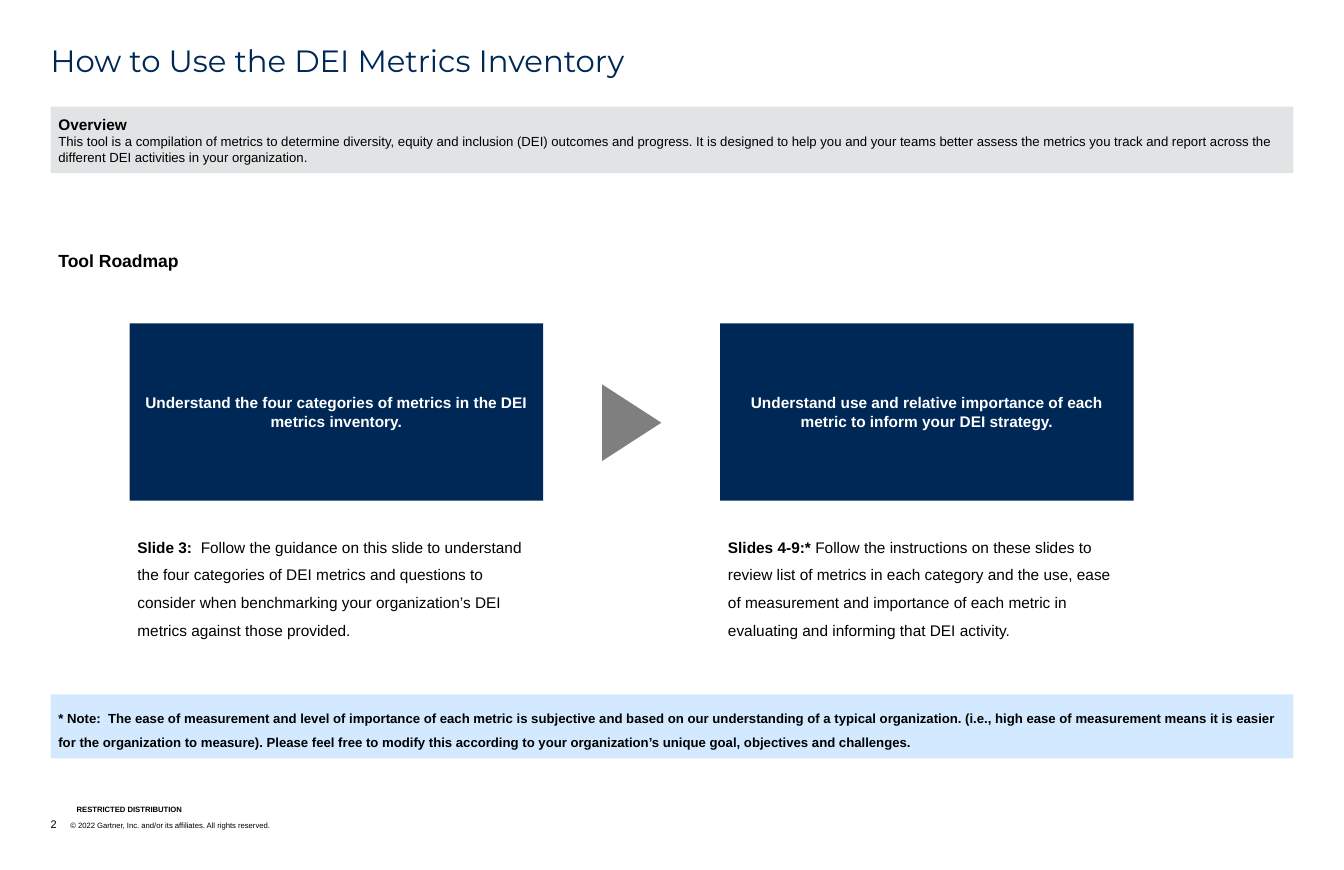
"""Build the slide on how to use the DEI metrics inventory."""
from dataclasses import dataclass

from pptx import Presentation
from pptx.dml.color import RGBColor
from pptx.enum.shapes import MSO_SHAPE as Preset
from pptx.enum.text import MSO_ANCHOR as Anchor, PP_ALIGN as Align
from pptx.shapes.autoshape import Shape
from pptx.slide import Slide
from pptx.util import Pt


@dataclass(frozen=True)
class Theme:
    navy: str = "002856"
    black: str = "000000"
    white: str = "FFFFFF"
    overview: str = "E1E4E4"
    note: str = "D3E9FF"
    arrow: str = "7F7F7F"
    title_font: str = "Montserrat"
    body_font: str = "Arial"
    title: float = 28
    section: float = 16
    step: float = 14
    body: float = 12
    page: float = 10
    legal: float = 7


@dataclass(frozen=True)
class Span:
    text: str
    size: float
    bold: bool = False
    color: str = Theme.black
    font: str = Theme.body_font


@dataclass(frozen=True)
class Panel:
    left: float
    top: float
    width: float
    height: float
    paragraphs: tuple[tuple[Span, ...], ...]
    fill: str | None = None
    inset_x: float = 7.2
    inset_y: float = 3.6
    anchor: Anchor = Anchor.TOP
    align: Align = Align.LEFT
    spacing: float = 1.0
    hanging: float = 0


@dataclass(frozen=True)
class Step:
    goal: str
    slides: str
    guidance: str


THEME = Theme()
MARGIN, CONTENT_WIDTH = 46.08, 1131.84
STEP_LEFT, STEP_PITCH, STEP_WIDTH = 118.08, 537.84, 376.56
STEP_TOP, STEP_HEIGHT, GUIDANCE_TOP = 294.48, 161.28, 477.6
ARROW_WIDTH, ARROW_HEIGHT = 69.84, 54

STEPS = (
    Step(
        "Understand the four categories of metrics in the DEI metrics inventory.",
        "Slide 3: ",
        " Follow the guidance on this slide to understand the four categories of DEI "
        "metrics and questions to consider when benchmarking your organization’s DEI "
        "metrics against those provided.",
    ),
    Step(
        "Understand use and relative importance of each metric to inform your DEI strategy.",
        "Slides 4-9:* ",
        "Follow the instructions on these slides to review list of metrics in each "
        "category and the use, ease of measurement and importance of each metric in "
        "evaluating and informing that DEI activity.",
    ),
)

OVERVIEW = (
    "This tool is a compilation of metrics to determine diversity, equity and inclusion "
    "(DEI) outcomes and progress. It is designed to help you and your teams better assess "
    "the metrics you track and report across the different DEI activities in your "
    "organization."
)
NOTE = (
    "* Note:  The ease of measurement and level of importance of each metric is subjective "
    "and based on our understanding of a typical organization. (i.e., high ease of "
    "measurement means it is easier for the organization to measure). Please feel free to "
    "modify this according to your organization’s unique goal, objectives and challenges."
)
COPYRIGHT = "\t© 2022 Gartner, Inc. and/or its affiliates. All rights reserved."

PANELS = (
    Panel(69.84, 732.96, 232.56, 7.92,
          ((Span("RESTRICTED DISTRIBUTION", THEME.legal, True),),),
          inset_x=0, inset_y=0, anchor=Anchor.BOTTOM, spacing=0.9),
    Panel(MARGIN, 743.76, 733.68, 12.24,
          ((Span("2", THEME.page), Span(COPYRIGHT, THEME.legal)),),
          inset_x=0, inset_y=0, anchor=Anchor.BOTTOM, hanging=18),
    Panel(MARGIN, 41.76, CONTENT_WIDTH, 51.84,
          ((Span("How to Use the DEI Metrics Inventory", THEME.title,
                 color=THEME.navy, font=THEME.title_font),),),
          inset_x=0, inset_y=0, spacing=0.9),
    Panel(MARGIN, 97.2, CONTENT_WIDTH, 60.48,
          ((Span("Overview", THEME.step, True),), (Span(OVERVIEW, THEME.body),)),
          fill=THEME.overview, inset_y=7.2),
    Panel(MARGIN, 214.56, 836.64, 35.28,
          ((Span("Tool Roadmap", THEME.section, True),),), spacing=1.5),
    Panel(MARGIN, 632.16, CONTENT_WIDTH, 58.32,
          ((Span(NOTE, THEME.body, True),),),
          fill=THEME.note, inset_y=7.2, spacing=1.5),
)


def apply(target: object, values: dict[str, object]) -> None:
    for name, value in values.items():
        setattr(target, name, value)


def draw_shape(slide: Slide, preset: Preset, left: float, top: float,
               width: float, height: float, fill: str) -> Shape:
    shape = slide.shapes.add_shape(preset, Pt(left), Pt(top), Pt(width), Pt(height))
    shape.shadow.inherit = False
    shape.fill.solid()
    shape.fill.fore_color.rgb = RGBColor.from_string(fill)
    shape.line.fill.background()
    return shape


def draw_panel(slide: Slide, panel: Panel) -> None:
    place = panel.left, panel.top, panel.width, panel.height
    if panel.fill:
        box = draw_shape(slide, Preset.RECTANGLE, *place, panel.fill)
    else:
        box = slide.shapes.add_textbox(*map(Pt, place))
    frame = box.text_frame
    apply(frame, {
        "word_wrap": True,
        "vertical_anchor": panel.anchor,
        "margin_left": Pt(panel.inset_x),
        "margin_right": Pt(panel.inset_x),
        "margin_top": Pt(panel.inset_y),
        "margin_bottom": Pt(panel.inset_y),
    })
    for index, spans in enumerate(panel.paragraphs):
        paragraph = frame.add_paragraph() if index else frame.paragraphs[0]
        apply(paragraph, {"alignment": panel.align, "line_spacing": panel.spacing})
        if panel.hanging:
            properties = paragraph._p.get_or_add_pPr()
            properties.set("marL", str(Pt(panel.hanging)))
            properties.set("indent", str(-Pt(panel.hanging)))
        for span in spans:
            run = paragraph.add_run()
            run.text = span.text
            apply(run.font, {"name": span.font, "size": Pt(span.size), "bold": span.bold})
            run.font.color.rgb = RGBColor.from_string(span.color)


def draw_step(slide: Slide, index: int, step: Step) -> None:
    left = STEP_LEFT + index * STEP_PITCH
    goal = Span(step.goal, THEME.step, True, THEME.white)
    draw_panel(slide, Panel(left, STEP_TOP, STEP_WIDTH, STEP_HEIGHT, ((goal,),),
                            fill=THEME.navy, anchor=Anchor.MIDDLE, align=Align.CENTER))
    guidance = Span(step.slides, THEME.step, True), Span(step.guidance, THEME.step)
    draw_panel(slide, Panel(left, GUIDANCE_TOP, STEP_WIDTH, 105.84, (guidance,),
                            spacing=1.5))


def draw_arrow(slide: Slide) -> None:
    center_x = STEP_LEFT + (STEP_WIDTH + STEP_PITCH) / 2
    center_y = STEP_TOP + STEP_HEIGHT / 2 + 9.72
    arrow = draw_shape(slide, Preset.ISOSCELES_TRIANGLE, center_x - ARROW_WIDTH / 2,
                       center_y - ARROW_HEIGHT / 2, ARROW_WIDTH, ARROW_HEIGHT, THEME.arrow)
    arrow.rotation = 90


def main() -> None:
    deck = Presentation()
    apply(deck, {"slide_width": Pt(1224), "slide_height": Pt(792)})
    slide = deck.slides.add_slide(deck.slide_layouts[6])
    for panel in PANELS:
        draw_panel(slide, panel)
    for index, step in enumerate(STEPS):
        draw_step(slide, index, step)
    draw_arrow(slide)
    deck.save("out.pptx")


if __name__ == "__main__":
    main()
